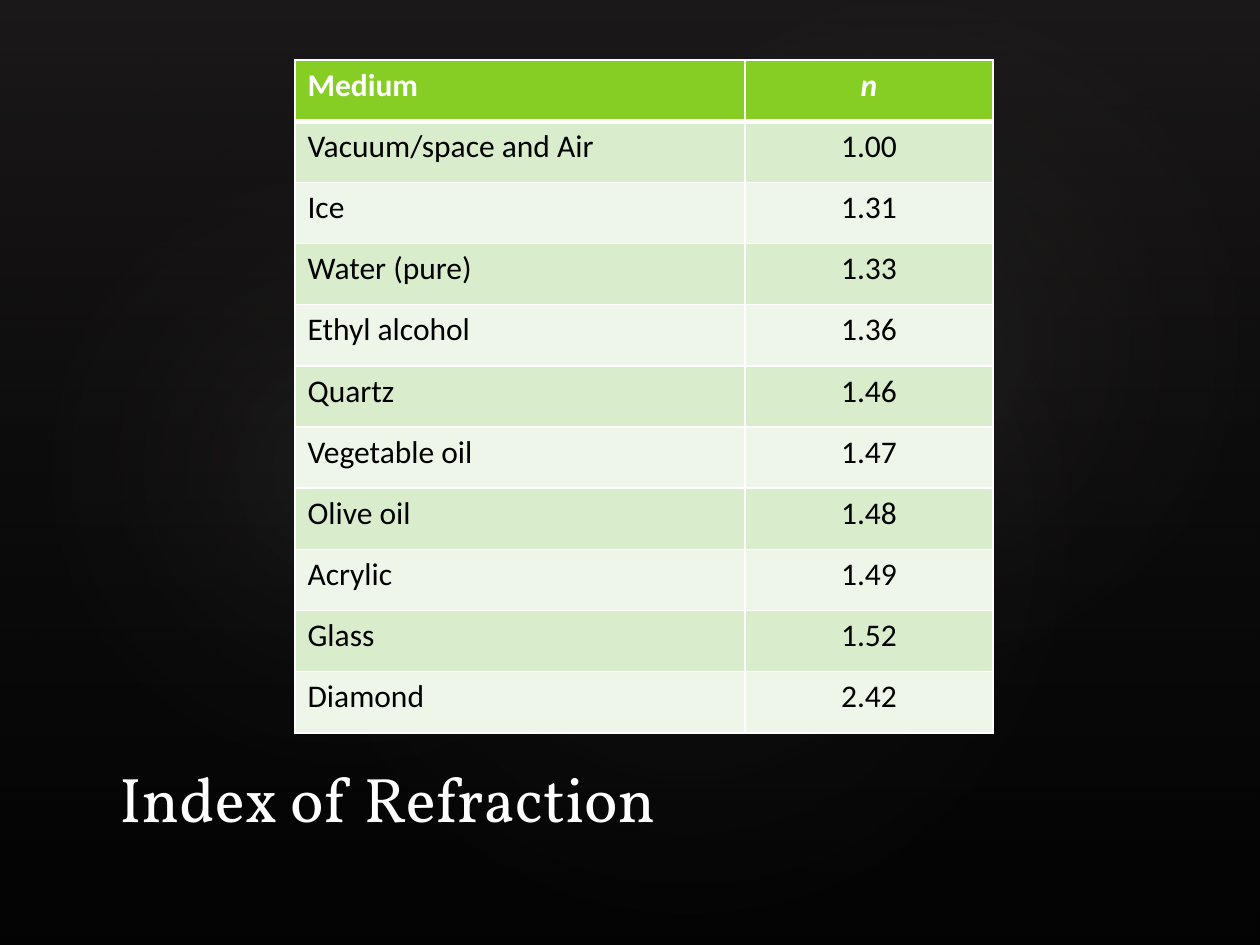
from dataclasses import dataclass

from lxml import etree
from pptx import Presentation
from pptx import util as u
from pptx.dml.color import RGBColor
from pptx.enum import shapes, text
from pptx.oxml import ns

SCALE = 914400 // 126  # EMU per px


@dataclass(frozen=True)
class Theme:
    background: str = "000000"
    shade: str = "282828"
    top_light: str = "4B4545"
    glow: str = "BFB9B9"
    white: str = "FFFFFF"
    body_text: str = "000000"
    header: str = "86CE24"
    bands: tuple = ("D9EDCD", "EDF6E8")
    title_font: str = "Vollkorn"
    table_font: str = "Calibri"
    title_size: int = 36
    table_size: int = 18


THEME = Theme()

# left, top, width, height in px, rotation in degrees, centre opacity in percent
GLOWS = [
    (189, 144, 998, 786, 328.7, 7),
    (-38, 161, 764, 617, 294.3, 8),
    (451, 16, 893, 655, 328.7, 8),
]
TABLE_BOX = (295, 60, 698, 673)
COLUMN_WIDTHS = (450, 248)
INDEX_ROWS = [
    ("Medium", "n"),
    ("Vacuum/space and Air", "1.00"),
    ("Ice", "1.31"),
    ("Water (pure)", "1.33"),
    ("Ethyl alcohol", "1.36"),
    ("Quartz", "1.46"),
    ("Vegetable oil", "1.47"),
    ("Olive oil", "1.48"),
    ("Acrylic", "1.49"),
    ("Glass", "1.52"),
    ("Diamond", "2.42"),
]


def px(*lengths):
    return [u.Emu(length * SCALE) for length in lengths]


def sub(parent, tag, **attributes):
    element = etree.SubElement(parent, ns.qn(tag))
    for name, value in attributes.items():
        element.set(name, str(value))
    return element


def add_run(paragraph, words, font, size, color, bold=False, italic=False):
    run = paragraph.add_run()
    run.text = words
    run.font.name = font
    run.font.size = u.Pt(size)
    run.font.bold = bold
    run.font.italic = italic
    run.font.color.rgb = RGBColor.from_string(color)


def add_gradient_shape(slide, kind, box, stops, radial=False, rotation=0):
    """Add a borderless shape; stops are (position, colour, opacity) in percent."""
    shape = slide.shapes.add_shape(kind, *px(*box))
    shape.rotation = rotation
    shape.shadow.inherit = False
    shape.line.fill.background()
    shape.fill.background()
    properties = shape._element.spPr
    gradient = etree.Element(ns.qn("a:gradFill"), rotWithShape="1")
    stop_list = sub(gradient, "a:gsLst")
    for position, color, opacity in stops:
        stop = sub(stop_list, "a:gs", pos=position * 1000)
        sub(sub(stop, "a:srgbClr", val=color), "a:alpha", val=opacity * 1000)
    if radial:
        circle = sub(gradient, "a:path", path="circle")
        sub(circle, "a:fillToRect", l=50000, t=50000, r=50000, b=50000)
    else:
        sub(gradient, "a:lin", ang=90 * 60000, scaled=0)
    properties.replace(properties.find(ns.qn("a:noFill")), gradient)


def add_backdrop(slide):
    slide.background.fill.solid()
    slide.background.fill.fore_color.rgb = RGBColor.from_string(THEME.background)
    add_gradient_shape(slide, shapes.MSO_SHAPE.RECTANGLE, (0, 0, 1260, 945),
                       [(0, THEME.top_light, 36), (100, THEME.shade, 10)])
    for *box, rotation, opacity in GLOWS:
        add_gradient_shape(slide, shapes.MSO_SHAPE.OVAL, box,
                           [(0, THEME.glow, opacity), (58, THEME.shade, 0)],
                           radial=True, rotation=rotation)


def add_title(slide, words):
    frame = slide.shapes.add_textbox(*px(107, 753, 1040, 88)).text_frame
    frame.word_wrap = True
    frame.vertical_anchor = text.MSO_ANCHOR.BOTTOM
    add_run(frame.paragraphs[0], words, THEME.title_font, THEME.title_size, THEME.white)


def set_borders(cell, **points):
    properties = cell._tc.get_or_add_tcPr()
    for side in "LRTB":
        line = sub(properties, f"a:ln{side}", w=u.Pt(points.get(side, 1)))
        sub(sub(line, "a:solidFill"), "a:srgbClr", val=THEME.white)


def add_index_table(slide):
    frame = slide.shapes.add_table(len(INDEX_ROWS), len(COLUMN_WIDTHS), *px(*TABLE_BOX))
    table = frame.table
    for column, width in zip(table.columns, px(*COLUMN_WIDTHS)):
        column.width = width
    for row, values in enumerate(INDEX_ROWS):
        is_header = row == 0
        fill = THEME.header if is_header else THEME.bands[(row - 1) % 2]
        color = THEME.white if is_header else THEME.body_text
        # The heavy rule under the header is shared with the first body row
        heavy = {0: {"B": 3}, 1: {"T": 3}}.get(row, {})
        for column, value in enumerate(values):
            cell = table.cell(row, column)
            set_borders(cell, **heavy)
            cell.fill.solid()
            cell.fill.fore_color.rgb = RGBColor.from_string(fill)
            paragraph = cell.text_frame.paragraphs[0]
            if column == 1:
                paragraph.alignment = text.PP_ALIGN.CENTER
            add_run(paragraph, value, THEME.table_font, THEME.table_size, color,
                    bold=is_header, italic=is_header and column == 1)


def main():
    presentation = Presentation()
    presentation.slide_width, presentation.slide_height = px(1260, 945)
    slide = presentation.slides.add_slide(presentation.slide_layouts[6])
    add_backdrop(slide)
    add_title(slide, "Index of Refraction")
    add_index_table(slide)
    presentation.save("out.pptx")


if __name__ == "__main__":
    main()
